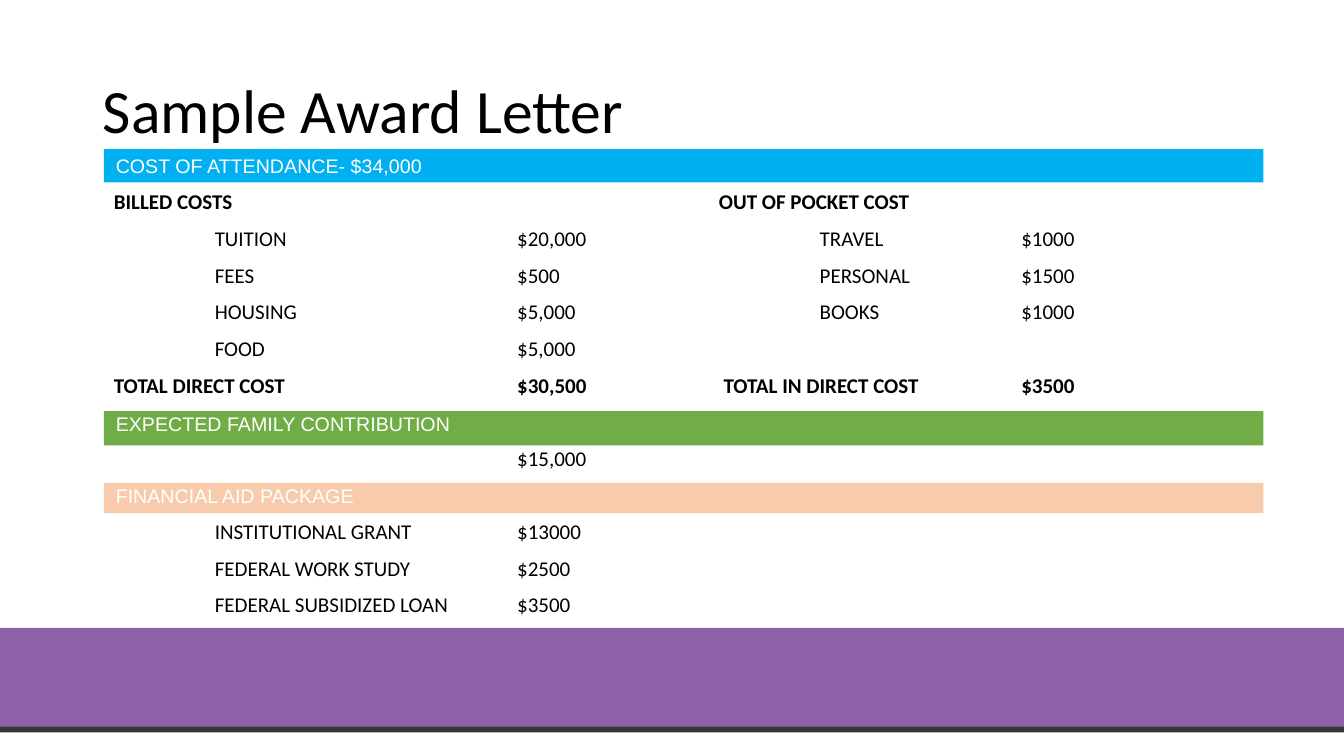
from lxml.etree import SubElement
from pptx import Presentation
from pptx.dml.color import RGBColor
from pptx.enum.shapes import MSO_SHAPE
from pptx.enum.text import MSO_ANCHOR, MSO_AUTO_SIZE, PP_ALIGN
from pptx.oxml.ns import qn
from pptx.util import Emu, Pt

PX = 9144  # 100 px to the inch
TAB = 100  # distance between tab stops, in px
BLACK = RGBColor(0x00, 0x00, 0x00)
WHITE = RGBColor(0xFF, 0xFF, 0xFF)
PURPLE = RGBColor(0x8E, 0x60, 0xA8)
BLUE = RGBColor(0x00, 0xB0, 0xF0)
GREEN = RGBColor(0x70, 0xAD, 0x47)
PEACH = RGBColor(0xF8, 0xCB, 0xAD)

# Text, bold, space before in points
LETTER_ROWS = [
    ("BILLED COSTS\t\t\t\t\tOUT OF POCKET COST", True, 0),
    ("\tTUITION\t\t\t$20,000\t\t\tTRAVEL\t\t$1000", False, 10),
    ("\tFEES\t\t\t$500\t\t\tPERSONAL\t\t$1500", False, 10),
    ("\tHOUSING\t\t\t$5,000\t\t\tBOOKS\t\t$1000", False, 10),
    ("\tFOOD\t\t\t$5,000", False, 10),
    ("TOTAL DIRECT COST\t\t\t$30,500\t\t TOTAL IN DIRECT COST\t\t$3500", True, 10),
    ("\t\t\t\t$15,000", False, 36),
    ("\tINSTITUTIONAL GRANT\t\t$13000", False, 36),
    ("\tFEDERAL WORK STUDY\t\t$2500", False, 10),
    ("\tFEDERAL SUBSIDIZED LOAN\t$3500", False, 10),
]

# Heading, colour, bar top, bar height, label top
SECTIONS = [
    ("COST OF ATTENDANCE- $34,000", BLUE, 148, 33, 148),
    ("EXPECTED FAMILY CONTRIBUTION", GREEN, 408, 34, 404),
    ("FINANCIAL AID PACKAGE", PEACH, 479, 30, 475),
]


def px(*lengths):
    return [Emu(n * PX) for n in lengths]


def place(sp, box):
    sp.left, sp.top, sp.width, sp.height = px(*box)


def style(p, font, size, color, bold=False):
    for r in p.runs:
        r.font.name = font
        r.font.size = Pt(size)
        r.font.color.rgb = color
        r.font.bold = bold


def add_bar(s, box, color):
    sp = s.shapes.add_shape(MSO_SHAPE.RECTANGLE, *px(*box))
    sp.shadow.inherit = False
    sp.fill.solid()
    sp.fill.fore_color.rgb = color
    sp.line.fill.background()
    return sp


def add_footer_band(s, box):
    sp = add_bar(s, box, PURPLE)
    effects = sp._element.spPr.find(qn("a:effectLst"))
    shadow = SubElement(effects, qn("a:outerShdw"), blurRad="0",
                        dist=str(Pt(4)), dir="5400000", rotWithShape="0")
    color = SubElement(shadow, qn("a:srgbClr"), val=str(BLACK))
    SubElement(color, qn("a:alpha"), val="79000")


def fill_title(sp, box):
    place(sp, box)
    tf = sp.text_frame
    tf.text = "Sample Award Letter"
    tf.auto_size = MSO_AUTO_SIZE.NONE
    tf.vertical_anchor = MSO_ANCHOR.MIDDLE
    p = tf.paragraphs[0]
    p.alignment = PP_ALIGN.LEFT
    p.line_spacing = 0.9
    style(p, "Calibri", 44, BLACK)


def set_tabs(p):
    pPr = p._p.get_or_add_pPr()
    pPr.set("marL", "0")
    pPr.set("indent", "0")
    pPr.set("defTabSz", str(TAB * PX))
    SubElement(pPr, qn("a:buNone"))


def fill_letter(sp, box):
    place(sp, box)
    tf = sp.text_frame
    tf.text = "\n".join(row[0] for row in LETTER_ROWS)
    tf.auto_size = MSO_AUTO_SIZE.NONE
    for p, (_, bold, before) in zip(tf.paragraphs, LETTER_ROWS):
        set_tabs(p)
        p.line_spacing = 0.9
        p.space_before = Pt(before)
        style(p, "Calibri", 15, BLACK, bold)


def add_section(s, box, heading, color, label_top):
    add_bar(s, box, color)
    label = s.shapes.add_textbox(*px(box[0] + 2, label_top, 408, 34))
    tf = label.text_frame
    tf.word_wrap = True
    tf.text = heading
    style(tf.paragraphs[0], "Arial", 14, WHITE)


def build_award_slide(prs):
    s = prs.slides.add_slide(prs.slide_layouts[1])
    # Title and footer
    add_footer_band(s, (0, 623, 1333, 98))
    fill_title(s.shapes.title, (92, 40, 1150, 145))
    # Costs and aid
    fill_letter(s.placeholders[1], (103, 185, 1150, 476))
    # Section headings
    for heading, color, top, height, label_top in SECTIONS:
        add_section(s, (103, top, 1150, height), heading, color, label_top)


def main():
    prs = Presentation()
    prs.slide_width, prs.slide_height = px(1333, 750)
    build_award_slide(prs)
    prs.save("out.pptx")


if __name__ == "__main__":
    main()
